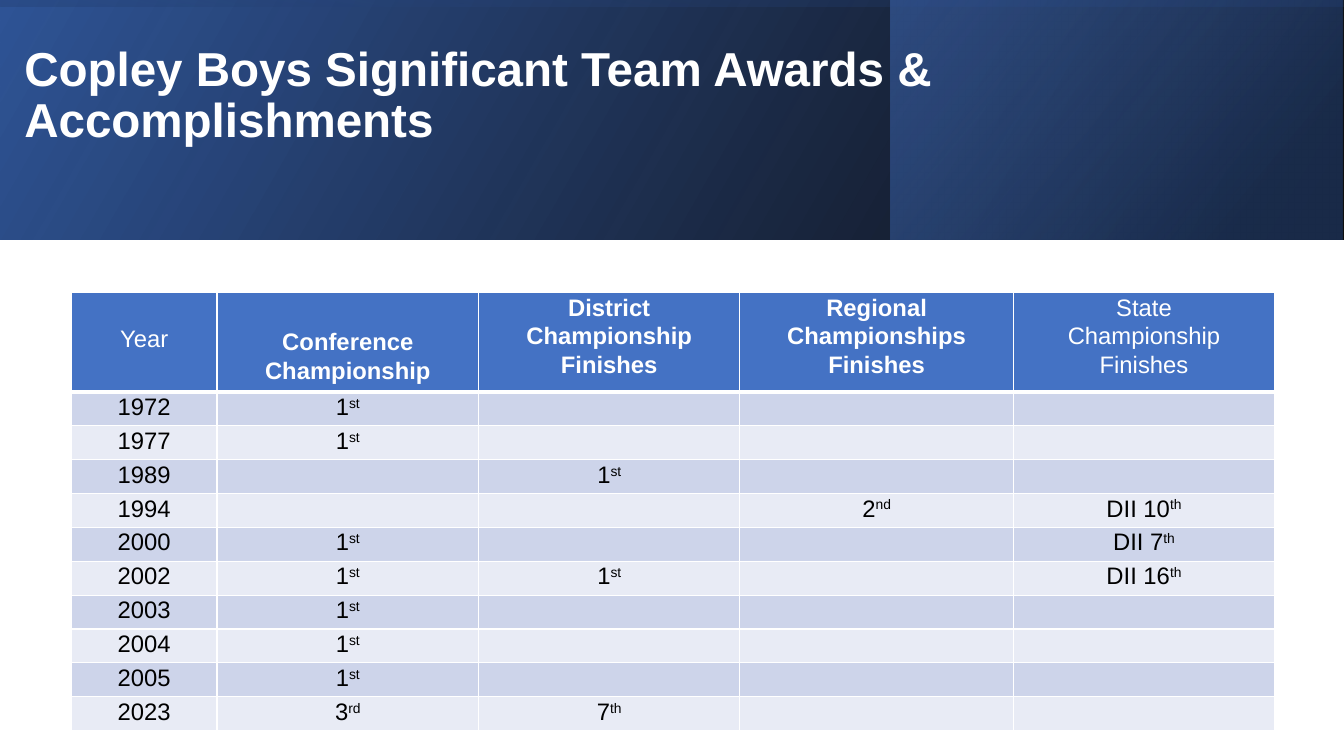
import pptx
import pptx.util
import pptx.dml.color
import pptx.enum.shapes
import pptx.enum.text
import pptx.oxml
import pptx.oxml.ns
from lxml import etree

Pt = pptx.util.Pt
RGB = pptx.dml.color.RGBColor
ANCHOR = pptx.enum.text.MSO_ANCHOR

BLACK = RGB(0x00, 0x00, 0x00)
WHITE = RGB(0xFF, 0xFF, 0xFF)
NAVY = RGB(0x1F, 0x38, 0x64)
DEEP_BLUE = RGB(0x2F, 0x54, 0x96)
BLUE = RGB(0x44, 0x72, 0xC4)
BAND_DARK = RGB(0xCD, 0xD4, 0xEA)
BAND_LIGHT = RGB(0xE8, 0xEB, 0xF5)

FONT = "Arial"
SLIDE_WIDTH, SLIDE_HEIGHT = 960, 540
BANNER_HEIGHT = 171
ACCENT_WIDTH = 323
COLUMN_WIDTHS = (104, 187, 186.5, 195.5, 186.5)
HEADER_HEIGHT, ROW_HEIGHT = 66.8, 24.2

# Header lines, bold, vertical anchor
HEADERS = (
    (("Year",), False, ANCHOR.MIDDLE),
    (("Conference", "Championship"), True, ANCHOR.BOTTOM),
    (("District", "Championship", "Finishes"), True, ANCHOR.TOP),
    (("Regional", "Championships", "Finishes"), True, ANCHOR.TOP),
    (("State", "Championship", "Finishes"), False, ANCHOR.TOP),
)
# Year, conference, district, regional, state; "^" starts the superscript
AWARDS = (
    ("1972", "1^st", "", "", ""),
    ("1977", "1^st", "", "", ""),
    ("1989", "", "1^st", "", ""),
    ("1994", "", "", "2^nd", "DII 10^th"),
    ("2000", "1^st", "", "", "DII 7^th"),
    ("2002", "1^st", "1^st", "", "DII 16^th"),
    ("2003", "1^st", "", "", ""),
    ("2004", "1^st", "", "", ""),
    ("2005", "1^st", "", "", ""),
    ("2023", "3^rd", "7^th", "", ""),
)


def add_child(parent, tag, **attributes):
    return etree.SubElement(parent, pptx.oxml.ns.qn(tag), attributes)


def set_font(paragraph, size, color, bold):
    paragraph.font.name = FONT
    paragraph.font.size = Pt(size)
    paragraph.font.color.rgb = color
    paragraph.font.bold = bold


def add_gradient_panel(slide, left, top, width, height, stops, angle, rotation=0):
    """Mirrored rectangle; each stop is (position %, colour, opacity %)."""
    panel = slide.shapes.add_shape(
        pptx.enum.shapes.MSO_SHAPE.RECTANGLE, Pt(left), Pt(top), Pt(width), Pt(height))
    panel.shadow.inherit = False
    panel.line.fill.background()
    panel.rotation = rotation
    properties = panel.element.spPr
    properties.find(pptx.oxml.ns.qn("a:xfrm")).set("flipH", "1")

    gradient = pptx.oxml.parse_xml(
        f'<a:gradFill {pptx.oxml.ns.nsdecls("a")} rotWithShape="1"/>')
    stop_list = add_child(gradient, "a:gsLst")
    for position, color, opacity in stops:
        stop = add_child(stop_list, "a:gs", pos=str(position * 1000))
        swatch = add_child(stop, "a:srgbClr", val=str(color))
        add_child(swatch, "a:alpha", val=str(opacity * 1000))
    add_child(gradient, "a:lin", ang=str(angle * 60000), scaled="0")
    properties.find(pptx.oxml.ns.qn("a:prstGeom")).addnext(gradient)


def add_banner(slide):
    add_gradient_panel(slide, 0, 0, SLIDE_WIDTH, BANNER_HEIGHT,
                       ((0, BLACK, 95), (100, DEEP_BLUE, 100)), 330)
    add_gradient_panel(slide, SLIDE_WIDTH - ACCENT_WIDTH - 1, 0, ACCENT_WIDTH, BANNER_HEIGHT,
                       ((0, NAVY, 67), (19, NAVY, 67), (100, BLUE, 47)), 320)
    # Turned a quarter, so its box is centred on the banner
    add_gradient_panel(slide, (SLIDE_WIDTH - BANNER_HEIGHT) / 2,
                       (BANNER_HEIGHT - SLIDE_WIDTH) / 2, BANNER_HEIGHT, SLIDE_WIDTH,
                       ((0, DEEP_BLUE, 15), (23, DEEP_BLUE, 15),
                        (99, BLACK, 44), (100, BLACK, 44)), 350, rotation=270)


def add_title(slide, text):
    title = slide.shapes.add_textbox(Pt(10.3), Pt(27.5), Pt(949.7), Pt(124)).text_frame
    title.word_wrap = True
    title.vertical_anchor = ANCHOR.TOP
    title.margin_top = Pt(5)
    heading = title.paragraphs[0]
    heading.text = text
    heading.line_spacing = 0.9
    set_font(heading, 34, WHITE, True)


def style_cell(cell, fill, bottom_margin=0, bottom_width=1):
    cell.margin_left = cell.margin_right = Pt(8)
    cell.margin_top = 0
    cell.margin_bottom = Pt(bottom_margin)
    properties = cell._tc.get_or_add_tcPr()
    for side, width in (("L", 1), ("R", 1), ("T", 1), ("B", bottom_width)):
        border = add_child(properties, f"a:ln{side}", w=str(Pt(width)))
        add_child(add_child(border, "a:solidFill"), "a:srgbClr", val=str(WHITE))
    cell.fill.solid()
    cell.fill.fore_color.rgb = fill


def write_line(paragraph, text, color, bold):
    paragraph.alignment = pptx.enum.text.PP_ALIGN.CENTER
    paragraph.line_spacing = 1.07
    set_font(paragraph, 17, color, bold)
    base, _, ordinal = text.partition("^")
    if base:
        paragraph.add_run().text = base
    if ordinal:
        suffix = paragraph.add_run()
        suffix.text = ordinal
        suffix.font._element.set("baseline", "30000")


def add_awards_table(slide):
    awards = slide.shapes.add_table(
        len(AWARDS) + 1, len(COLUMN_WIDTHS), Pt(51), Pt(209), Pt(sum(COLUMN_WIDTHS)),
        Pt(HEADER_HEIGHT + ROW_HEIGHT * len(AWARDS))).table
    awards.horz_banding = False
    for column, width in zip(awards.columns, COLUMN_WIDTHS):
        column.width = Pt(width)
    for index, row in enumerate(awards.rows):
        row.height = Pt(ROW_HEIGHT if index else HEADER_HEIGHT)

    # Header row, its text held clear of the bottom edge
    for column, (lines, bold, anchor) in enumerate(HEADERS):
        cell = awards.cell(0, column)
        style_cell(cell, BLUE, bottom_margin=5.5, bottom_width=3)
        cell.vertical_anchor = anchor
        for number, line in enumerate(lines):
            frame = cell.text_frame
            paragraph = frame.add_paragraph() if number else frame.paragraphs[0]
            write_line(paragraph, line, WHITE, bold)

    # One row per year
    for row, results in enumerate(AWARDS, start=1):
        for column, result in enumerate(results):
            cell = awards.cell(row, column)
            style_cell(cell, BAND_DARK if row % 2 else BAND_LIGHT)
            write_line(cell.text_frame.paragraphs[0], result, BLACK, False)


def main():
    presentation = pptx.Presentation()
    presentation.slide_width = Pt(SLIDE_WIDTH)
    presentation.slide_height = Pt(SLIDE_HEIGHT)
    slide = presentation.slides.add_slide(presentation.slide_layouts[6])
    add_banner(slide)
    add_title(slide, "Copley Boys Significant Team Awards & Accomplishments")
    add_awards_table(slide)
    presentation.save("out.pptx")


if __name__ == "__main__":
    main()
